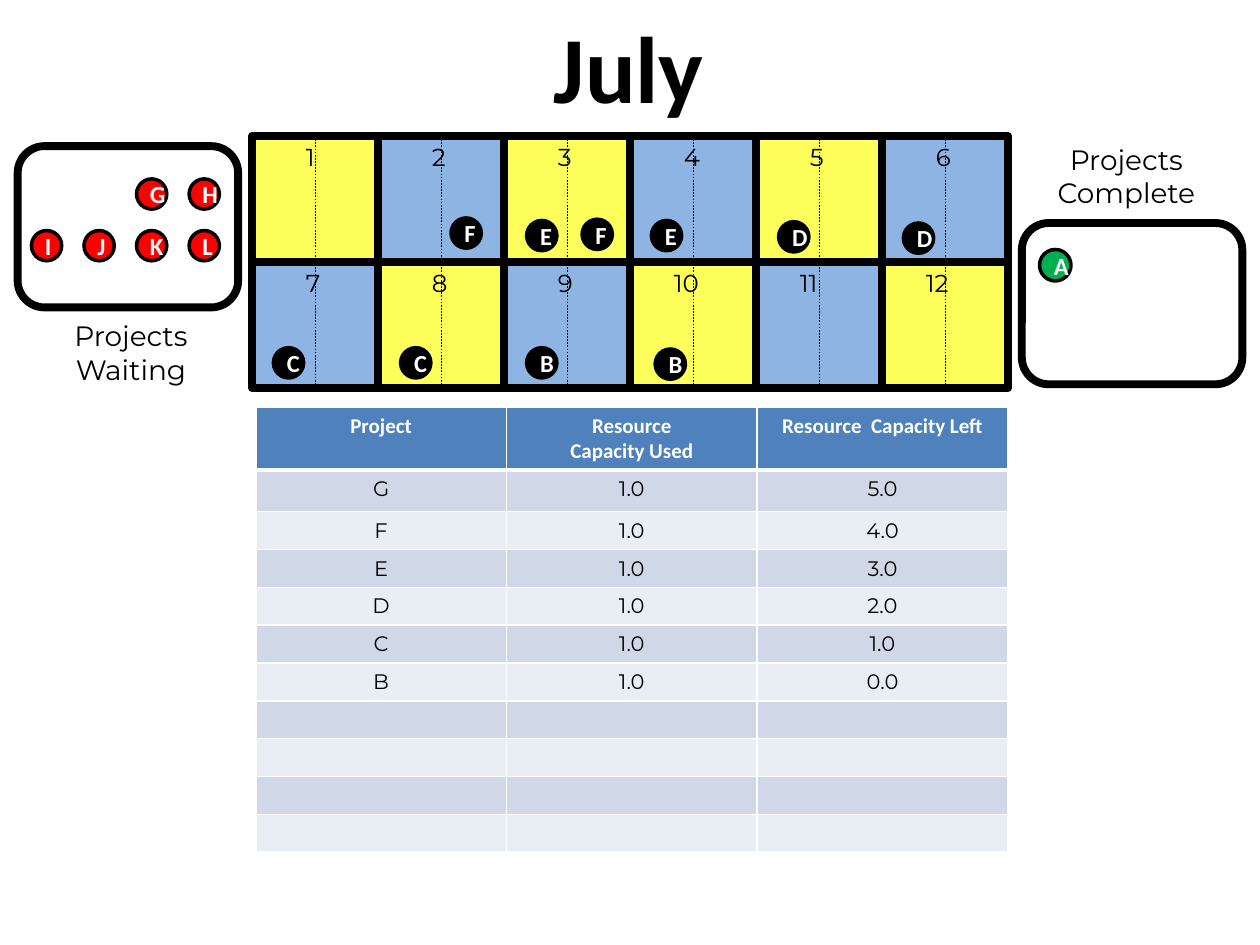
from lxml import etree
from pptx import Presentation
from pptx import util as u
from pptx.dml.color import RGBColor
from pptx.enum import dml, shapes, text
from pptx.oxml import ns

LEFT, TOP, CELL = 2, 1.08, 1
COLUMNS, ROWS = 6, 2
YELLOW, BLUE, BLACK, WHITE = "FFFF5B", "8EB4E3", "000000", "FFFFFF"
RED, GREEN = "FF0000", "00B050"

# letter, column and row of the token's corner on the month grid
ACTIVE = [("F", 1.58, 0.65), ("E", 2.18, 0.67), ("F", 2.62, 0.66),
          ("E", 3.17, 0.67), ("D", 4.18, 0.68), ("D", 5.17, 0.69),
          ("C", 0.17, 1.68), ("C", 1.18, 1.68), ("B", 2.18, 1.68),
          ("B", 3.2, 1.69)]
WAITING = ["  GH", "IJKL"]
HEADINGS = ["Project", "Resource\nCapacity Used", "Resource  Capacity Left"]
PROJECTS = ["G", "F", "E", "D", "C", "B"]
EMPTY_ROWS = 4


def rgb(value):
    return RGBColor.from_string(value)


def inches(*values):
    return [u.Inches(value) for value in values]


def sub(parent, tag, **attributes):
    return etree.SubElement(parent, ns.qn(tag), attributes)


def write(frame, words, size=14, font="Montserrat", color=BLACK, bold=False,
          align=text.PP_ALIGN.CENTER):
    """Fill a text frame, one paragraph to each line of words."""
    for number, line in enumerate(words.split("\n")):
        paragraph = frame.add_paragraph() if number else frame.paragraphs[0]
        paragraph.alignment = align
        run = paragraph.add_run()
        run.text = line
        run.font.size = u.Pt(size)
        run.font.name = font
        run.font.bold = bold
        run.font.color.rgb = rgb(color)


def add_label(slide, words, at, **style):
    frame = slide.shapes.add_textbox(*inches(*at)).text_frame
    frame.word_wrap = True
    write(frame, words, **style)


def add_box(slide, kind, at, fill=None, width=4.5):
    box = slide.shapes.add_shape(kind, *inches(*at))
    box.shadow.inherit = False
    if fill:
        box.fill.solid()
        box.fill.fore_color.rgb = rgb(fill)
    else:
        box.fill.background()
    box.line.color.rgb = rgb(BLACK)
    box.line.width = u.Pt(width)
    return box


def add_token(slide, letter, left, top, fill, size=0.24):
    token = add_box(slide, shapes.MSO_SHAPE.OVAL, (left, top, size, size), fill, 2)
    write(token.text_frame, letter, font="Calibri", color=WHITE, bold=True)


def add_halfway_line(slide, x):
    line = slide.shapes.add_connector(
        shapes.MSO_CONNECTOR.STRAIGHT, *inches(x, TOP, x, TOP + ROWS * CELL))
    line.line.color.rgb = rgb(BLACK)
    line.line.width = u.Pt(0.25)
    line.line.dash_style = dml.MSO_LINE.DASH
    sub(line._element.spPr, "a:effectLst")


def add_title(slide, words):
    title = slide.shapes.title
    title.left, title.top, title.width, title.height = inches(4.29, 0.02, 1.4, 1.01)
    frame = title.text_frame
    frame.word_wrap = False
    frame.auto_size = text.MSO_AUTO_SIZE.NONE
    frame.vertical_anchor = text.MSO_ANCHOR.TOP
    write(frame, words, size=54, font="Calibri", bold=True)
    properties = frame.paragraphs[0].runs[0]._r.get_or_add_rPr()
    outline = sub(properties, "a:ln", w=str(u.Pt(1)))
    sub(sub(outline, "a:solidFill"), "a:srgbClr", val=BLACK)
    properties.insert(0, outline)


def add_months(slide):
    cells = [(row, column) for row in range(ROWS) for column in range(COLUMNS)]
    for row, column in cells:
        fill = BLUE if (row + column) % 2 else YELLOW
        at = (LEFT + column * CELL, TOP + row * CELL, CELL, CELL)
        add_box(slide, shapes.MSO_SHAPE.RECTANGLE, at, fill)
    for column in range(COLUMNS):
        add_halfway_line(slide, LEFT + (column + 0.5) * CELL)
    for month, (row, column) in enumerate(cells, 1):
        indent, width = (0.33, 0.42) if month < 10 else (0.25, 0.5)
        at = (LEFT + column * CELL + indent, TOP + row * CELL, width, 0.34)
        add_label(slide, str(month), at, align=text.PP_ALIGN.LEFT)


def add_pools(slide):
    for left, top in [(0.14, 1.16), (8.11, 1.77)]:
        add_box(slide, shapes.MSO_SHAPE.ROUNDED_RECTANGLE, (left, top, 1.75, 1.28))
    add_label(slide, "Projects Waiting", (0.24, 2.48, 1.6, 0.64), size=16)
    add_label(slide, "Projects Complete", (8.14, 1.08, 1.6, 0.64), size=16)


def add_tokens(slide):
    for row, letters in enumerate(WAITING):
        for column, letter in enumerate(letters):
            if letter != " ":
                add_token(slide, letter, 0.25 + column * 0.417, 1.42 + row * 0.41, RED)
    add_token(slide, "A", 8.25, 1.98, GREEN, 0.25)
    for letter, column, row in ACTIVE:
        add_token(slide, letter, LEFT + column * CELL, TOP + row * CELL, BLACK)


def set_borders(cell, bottom):
    properties = cell._tc.get_or_add_tcPr()
    widths = {"a:lnL": 1, "a:lnR": 1, "a:lnT": 1, "a:lnB": bottom}
    for place, (tag, width) in enumerate(widths.items()):
        border = sub(properties, tag, w=str(u.Pt(width)))
        sub(sub(border, "a:solidFill"), "a:srgbClr", val=WHITE)
        properties.insert(place, border)


def add_capacity_table(slide):
    last = len(PROJECTS) - 1
    rows = [HEADINGS]
    rows += [[name, "1.0", f"{last - used}.0"] for used, name in enumerate(PROJECTS)]
    rows += [[""] * len(HEADINGS)] * EMPTY_ROWS
    table = slide.shapes.add_table(
        len(rows), len(HEADINGS), *inches(2.03, 3.23, 5.97, 3.52)).table
    for number, words in enumerate(rows):
        heading = number == 0
        table.rows[number].height = u.Inches({0: 0.49, 1: 0.33}.get(number, 0.3))
        fill = "4F81BD" if heading else "D0D8E8" if number % 2 else "E9EDF4"
        style = {"font": "Calibri", "color": WHITE, "bold": True} if heading else {}
        for column, entry in enumerate(words):
            cell = table.cell(number, column)
            cell.fill.solid()
            cell.fill.fore_color.rgb = rgb(fill)
            # the heavier rule under the headings is shared with the row below
            set_borders(cell, 3 if heading else 1)
            if number == 1:
                cell._tc.tcPr.find(ns.qn("a:lnT")).set("w", str(u.Pt(3)))
            if entry:
                write(cell.text_frame, entry, size=12, **style)
            else:
                sub(cell.text_frame.paragraphs[0]._p, "a:endParaRPr", sz="1200")


def main():
    deck = Presentation()
    deck.slide_width, deck.slide_height = inches(10, 7.5)
    slide = deck.slides.add_slide(deck.slide_layouts.get_by_name("Title Only"))
    add_title(slide, "July")
    add_months(slide)
    add_pools(slide)
    add_tokens(slide)
    add_capacity_table(slide)
    deck.save("out.pptx")


if __name__ == "__main__":
    main()
